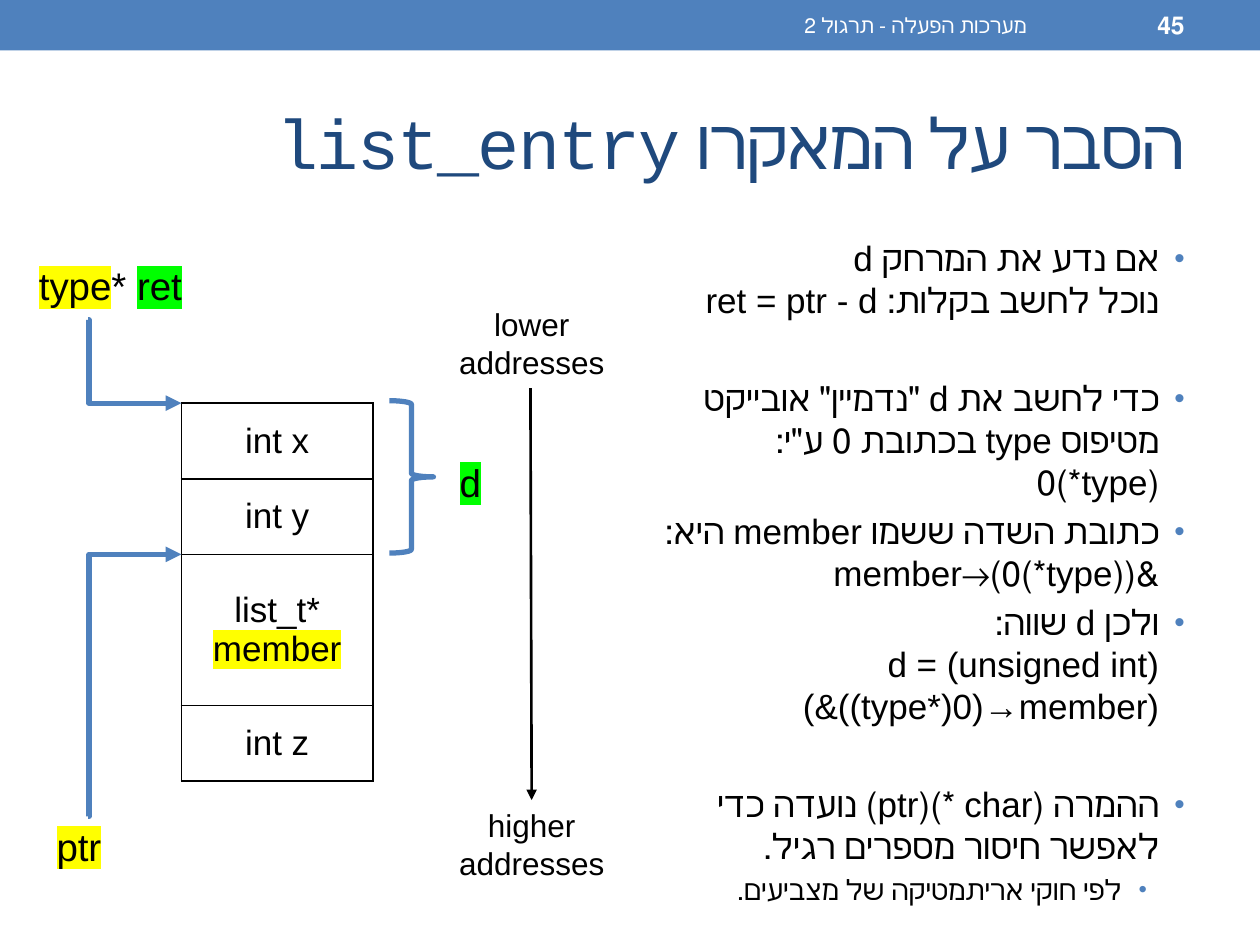
from lxml import etree
from pptx import Presentation
from pptx import util as u
from pptx.dml.color import RGBColor
from pptx.enum import shapes, text
from pptx.oxml.ns import qn

BLUE = RGBColor(0x4F, 0x81, 0xBD)
NAVY = RGBColor(0x1F, 0x49, 0x7D)
BLACK = RGBColor(0, 0, 0)
WHITE = RGBColor(0xFF, 0xFF, 0xFF)
YELLOW = RGBColor(0xFF, 0xFF, 0)
GREEN = RGBColor(0, 0xFF, 0)

LEFT, CENTER, RIGHT = text.PP_ALIGN.LEFT, text.PP_ALIGN.CENTER, text.PP_ALIGN.RIGHT
TOP, MIDDLE = text.MSO_ANCHOR.TOP, text.MSO_ANCHOR.MIDDLE

BULLETS = [
    ("אם נדע את המרחק d \nנוכל לחשב בקלות: ret = ptr - d", 4, 0),
    ("כדי לחשב את d \"נדמיין\" אובייקט מטיפוס type בכתובת 0 ע\"י: (type*)0", 32, 0),
    ("כתובת השדה ששמו member היא: &((type*)0)→member", 4, 0),
    ("ולכן d שווה:\nd = (unsigned int)\n(&((type*)0)→member)", 4, 0),
    ("ההמרה (char *)(ptr) נועדה כדי לאפשר חיסור מספרים רגיל.", 32, 0),
    ("לפי חוקי אריתמטיקה של מצביעים.", 3, 1),
]
FIELDS = [
    ([("int x", {})], 0.6),
    ([("int y", {})], 0.6),
    ([("list_t* ", {}), ("member", {"highlight": YELLOW})], 1.2),
    ([("int z", {})], 0.6),
]


def sub(parent, tag, **attrs):
    """Append a child element and return it."""
    return etree.SubElement(parent, qn(tag), attrs)


def add_text(p, content, size=20, font="Arial", color=BLACK, bold=False,
             highlight=None, spacing=None):
    """Add formatted text to a paragraph, breaking lines at newlines."""
    for i, line in enumerate(content.split("\n")):
        if i:
            p.add_line_break()
        r = p.add_run()
        r.text = line
        r.font.size, r.font.bold = u.Pt(size), bold
        r.font.color.rgb = color
        rPr = r.font._element
        if highlight is not None:
            sub(sub(rPr, "a:highlight"), "a:srgbClr", val=str(highlight))
        if spacing is not None:
            rPr.set("spc", str(spacing * 100))
        r.font.name = font


def set_paragraph(p, align, rtl=False):
    """Set the alignment and reading direction of a paragraph."""
    p.alignment = align
    if rtl:
        p._p.get_or_add_pPr().set("rtl", "1")


def add_box(s, box, runs=(), align=LEFT, rtl=False, anchor=TOP, **fmt):
    """Add a text box holding one paragraph and return its text frame."""
    tf = s.shapes.add_textbox(*map(u.Inches, box)).text_frame
    tf.word_wrap = True
    tf.vertical_anchor = anchor
    p = tf.paragraphs[0]
    set_paragraph(p, align, rtl)
    for content, extra in runs:
        add_text(p, content, **{**fmt, **extra})
    return tf


def add_bullets(s, box):
    """Add the right-to-left bullet list."""
    tf = add_box(s, box)
    for i, (content, before, level) in enumerate(BULLETS):
        p = tf.add_paragraph() if i else tf.paragraphs[0]
        set_paragraph(p, RIGHT, rtl=True)
        p.level = level
        p.space_before = u.Pt(before)
        pPr = p._p.get_or_add_pPr()
        pPr.set("marL", str(u.Inches(0.2 + 0.3 * level)))
        pPr.set("indent", str(u.Inches(-0.2)))
        sub(sub(pPr, "a:buClr"), "a:srgbClr", val=str(BLUE))
        sub(pPr, "a:buSzPct", val="85000")
        sub(pPr, "a:buFont", typeface="Arial")
        sub(pPr, "a:buChar", char="•")
        add_text(p, content, size=20 - 4 * level)


def add_struct(s, left, top, width):
    """Add the memory layout table."""
    height = sum(h for _, h in FIELDS)
    table = s.shapes.add_table(len(FIELDS), 1, *map(u.Inches, (left, top, width, height))).table
    table.first_row = table.horz_banding = False
    for row, (runs, h) in zip(table.rows, FIELDS):
        row.height = u.Inches(h)
        cell = row.cells[0]
        cell.vertical_anchor = MIDDLE
        p = cell.text_frame.paragraphs[0]
        set_paragraph(p, CENTER)
        for content, fmt in runs:
            add_text(p, content, **fmt)
        tcPr = cell._tc.get_or_add_tcPr()
        for side in ("a:lnL", "a:lnR", "a:lnT", "a:lnB"):
            ln = sub(tcPr, side, w=str(u.Pt(1)))
            sub(sub(ln, "a:solidFill"), "a:srgbClr", val=str(BLACK))
        cell.fill.background()


def add_arrow(s, start, end, color, width, bent=False):
    """Add an arrow, straight or going vertically and then horizontally."""
    kind = shapes.MSO_CONNECTOR.ELBOW if bent else shapes.MSO_CONNECTOR.STRAIGHT
    cx = s.shapes.add_connector(kind, *map(u.Inches, (*start, *end)))
    cx.line.color.rgb, cx.line.width = color, u.Pt(width)
    sub(cx.line._get_or_add_ln(), "a:tailEnd", type="triangle")
    spPr = cx._element.spPr
    sub(spPr, "a:effectLst")
    if bent:
        av = spPr.find(qn("a:prstGeom")).find(qn("a:avLst"))
        sub(av, "a:gd", name="adj1", fmla="val 1000")


def add_shape(s, kind, box, fill=None, line=None):
    """Add a preset shape with a fill or an outline."""
    sp = s.shapes.add_shape(kind, *map(u.Inches, box))
    sp.shadow.inherit = False
    if fill is None:
        sp.fill.background()
    else:
        sp.fill.solid()
        sp.fill.fore_color.rgb = fill
    if line is None:
        sp.line.fill.background()
    else:
        sp.line.color.rgb, sp.line.width = line, u.Pt(3)


def main():
    """Build the slide and save it."""
    prs = Presentation()
    prs.slide_width, prs.slide_height = u.Inches(10), u.Inches(7.5)
    s = prs.slides.add_slide(prs.slide_layouts[6])

    add_shape(s, shapes.MSO_SHAPE.RECTANGLE, (0, 0, 10, 0.4), fill=BLUE)
    hebrew = {"align": RIGHT, "rtl": True, "anchor": MIDDLE}
    add_box(s, (0.5, 0.58, 9, 1.08),
            [("הסבר על המאקרו ", {}), ("list_entry", {"font": "Courier New"})],
            size=40, color=NAVY, spacing=-1, **hebrew)
    add_box(s, (3.75, 0.02, 4.5, 0.36), [("מערכות הפעלה - תרגול 2", {})],
            size=12, color=WHITE, **hebrew)
    add_box(s, (8.33, 0.02, 1.17, 0.36), [("45", {})],
            size=14, color=WHITE, bold=True, **hebrew)

    add_struct(s, 1.44, 3.2, 1.52)
    add_bullets(s, (5.08, 1.83, 4.42, 5.16))

    add_box(s, (0.21, 2.03, 1.45, 0.47),
            [("type", {"highlight": YELLOW}), ("* ", {}), ("ret", {"highlight": GREEN})], size=22)
    add_box(s, (0.35, 6.48, 0.69, 0.47), [("ptr", {})], size=22, highlight=YELLOW)
    add_box(s, (3.55, 3.59, 0.42, 0.47), [("d", {})], size=22, highlight=GREEN)
    for content, top in (("lower addresses", 2.37), ("higher addresses", 6.35)):
        add_box(s, (3.38, top, 1.68, 0.71), [(content, {})], align=CENTER, size=18)

    add_arrow(s, (0.7, 2.54), (1.44, 3.2), BLUE, 3, bent=True)
    add_arrow(s, (0.7, 6.48), (1.44, 4.4), BLUE, 3, bent=True)
    add_arrow(s, (4.21, 3.08), (4.22, 6.35), BLACK, 1.5)
    add_shape(s, shapes.MSO_SHAPE.RIGHT_BRACE, (3.09, 3.18, 0.35, 1.21), line=BLUE)

    prs.save("out.pptx")


if __name__ == "__main__":
    main()
